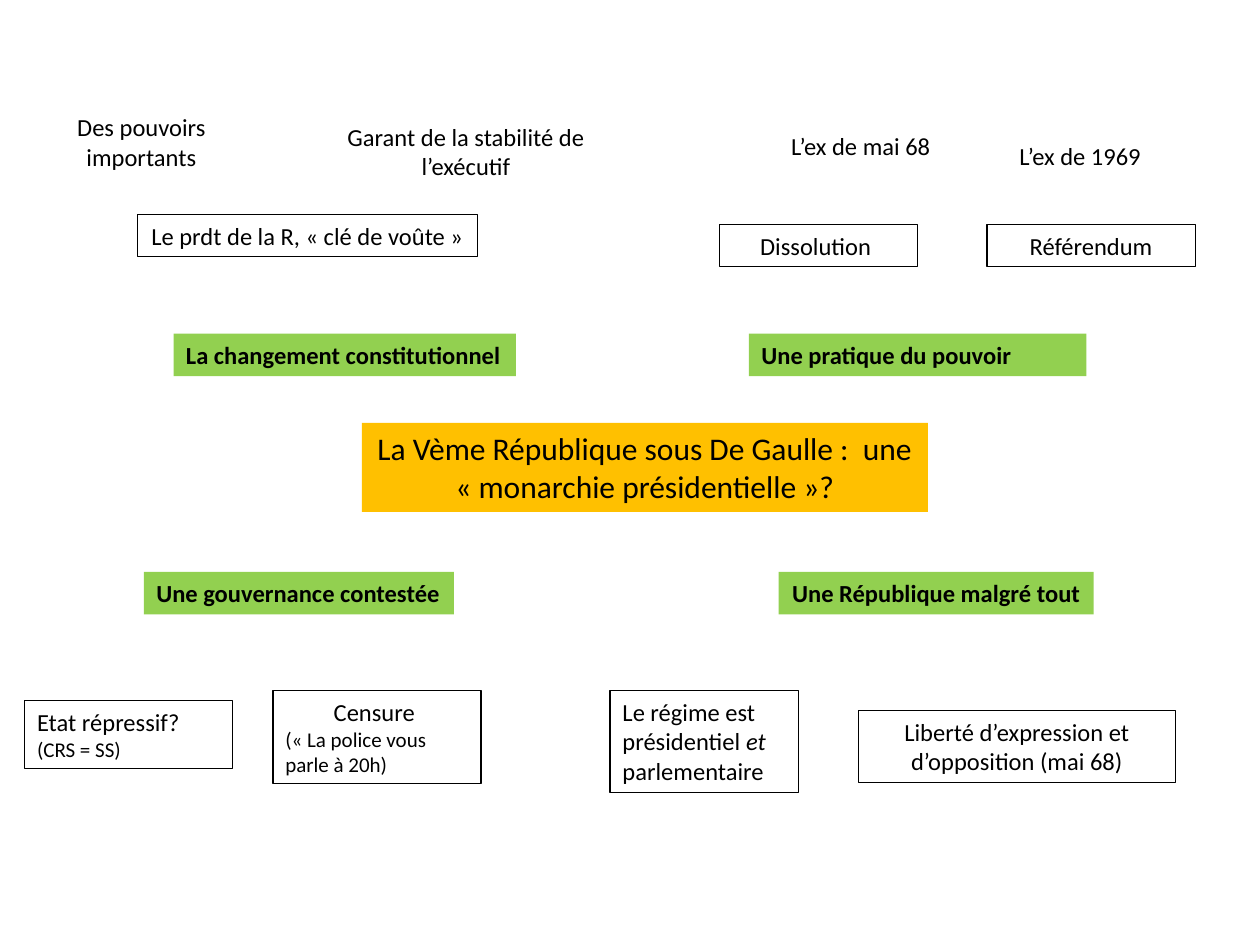
from pptx import Presentation
from pptx.dml.color import RGBColor
from pptx.enum.text import MSO_AUTO_SIZE, PP_ALIGN
from pptx.util import Pt

GROW = MSO_AUTO_SIZE.SHAPE_TO_FIT_TEXT
LEFT, MID = PP_ALIGN.LEFT, PP_ALIGN.CENTER
BLACK = RGBColor(0, 0, 0)
GREEN = RGBColor(0x92, 0xD0, 0x50)
AMBER = RGBColor(0xFF, 0xC0, 0x00)
FACE = "Calibri"
ROW = 24.24


class Map:
    def __init__(self, slide):
        self.slide = slide

    def style(self, para, align, size, bold=False):
        para.alignment = align
        font = para.font
        font.name, font.size, font.bold = FACE, Pt(size), bold
        font.color.rgb = BLACK

    def note(self, text, x, y, w, h=ROW, align=MID, wrap=True, size=14, bold=False):
        box = self.slide.shapes.add_textbox(Pt(x), Pt(y), Pt(w), Pt(h))
        frame = box.text_frame
        frame.word_wrap = wrap
        frame.auto_size = GROW
        para = frame.paragraphs[0]
        para.text = text
        self.style(para, align, size, bold)
        return box

    def fact(self, text, x, y, w, h=ROW, **look):
        box = self.note(text, x, y, w, h, **look)
        box.line.color.rgb = BLACK
        box.line.width = Pt(0.75)
        return box.text_frame

    def theme(self, text, x, y, w, h=ROW, fill=GREEN, bold=True, **look):
        box = self.note(text, x, y, w, h, bold=bold, **look)
        box.fill.solid()
        box.fill.fore_color.rgb = fill

    def add_run(self, para, text):
        run = para.add_run()
        run.text = text
        return run.font


def main():
    deck = Presentation()
    deck.slide_width, deck.slide_height = Pt(720), Pt(540)
    page = Map(deck.slides.add_slide(deck.slide_layouts[6]))

    page.theme("La Vème République sous De Gaulle :  une « monarchie présidentielle »?",
               206.8, 241.7, 323.4, 50.9, fill=AMBER, bold=False, size=18)
    page.theme("La changement constitutionnel", 99.2, 190.7, 195.6, align=LEFT, wrap=False)
    page.theme("Une pratique du pouvoir", 428, 190.7, 192.8, align=LEFT)
    page.theme("Une gouvernance contestée", 82.2, 326.8, 177.2, align=LEFT, wrap=False)
    page.theme("Une République malgré tout", 445, 326.8, 180, wrap=False)

    page.note("Des pouvoirs importants", 8.5, 60.6, 144.6, 41.2)
    page.note("Garant de la stabilité de l’exécutif", 178.4, 66.2, 175.7, 41.2)
    page.note("L’ex de mai 68", 445, 71.5, 95, align=LEFT, wrap=False)
    page.note("L’ex de 1969", 575.4, 77.2, 85, align=LEFT, wrap=False)

    page.fact("Le prdt de la R, « clé de voûte »", 78.5, 122.5, 194.5, wrap=False)
    page.fact("Dissolution ", 411, 128.2, 113.3)
    page.fact("Référendum", 564, 128.2, 119)
    page.fact("Liberté d’expression et d’opposition (mai 68)", 490.4, 406, 181.4, 41.2)

    regime = page.fact("Le régime est présidentiel ", 348.6, 394.6, 107.8, 58.2, align=LEFT)
    page.add_run(regime.paragraphs[0], "et ").italic = True
    page.add_run(regime.paragraphs[0], "parlementaire")

    state = page.fact("Etat répressif? ", 14.1, 400.3, 119, 38.8, align=LEFT)
    page.add_run(state.paragraphs[0], "(CRS = SS)").size = Pt(12)

    censor = page.fact("Censure ", 156, 394.6, 119, 53.3)
    quote = censor.add_paragraph()
    quote.text = "(« La police vous parle à 20h)"
    page.style(quote, LEFT, 12)

    deck.save("out.pptx")


if __name__ == "__main__":
    main()
